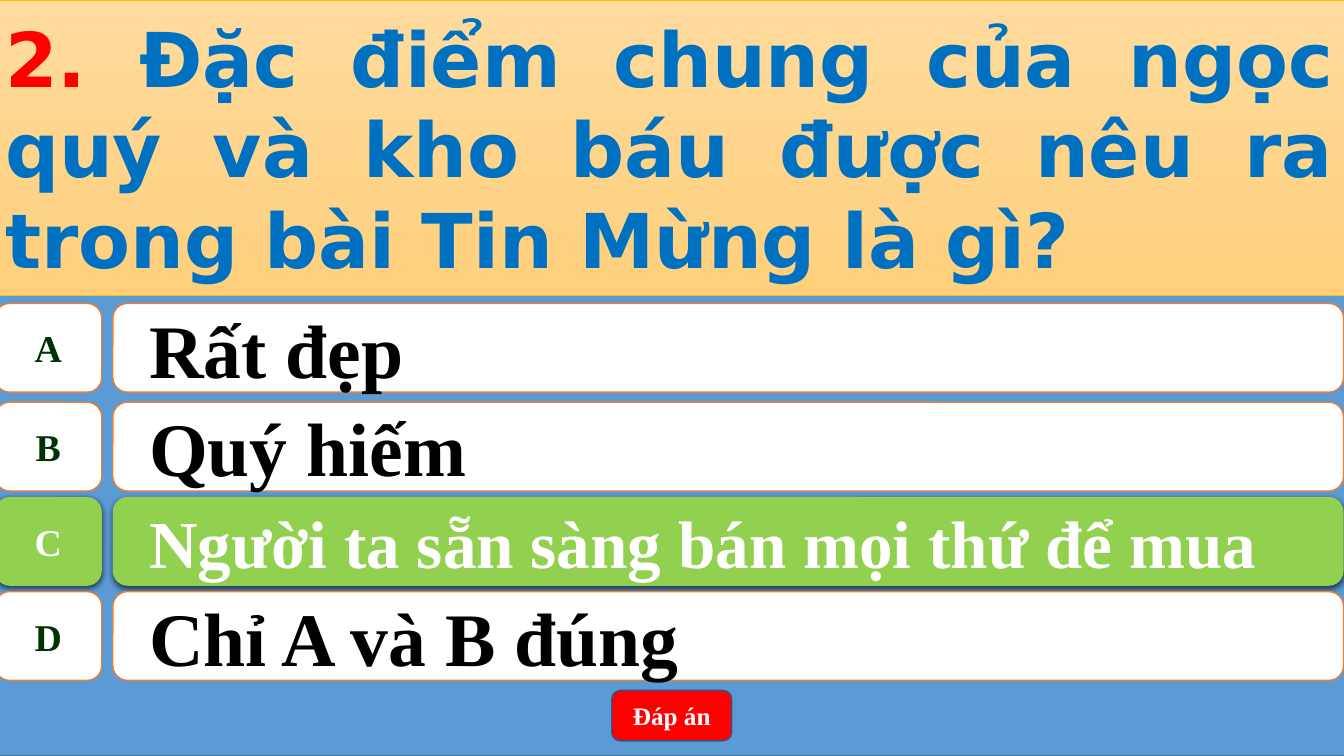
from lxml.etree import SubElement
from pptx import Presentation
from pptx.dml.color import RGBColor
from pptx.enum.shapes import MSO_SHAPE as Shape
from pptx.enum.text import MSO_ANCHOR as Anchor, MSO_AUTO_SIZE as AutoSize, PP_ALIGN as Align
from pptx.oxml.ns import qn
from pptx.util import Pt

LEFT, FULL_WIDTH = -3.6, 964
ROW_HEIGHT = 63.4
ANSWERS = [
    ("A", "Rất đẹp", 216.7, 54),
    ("B", "Quý hiếm", 287.3, 54),
    ("C", "Người ta sẵn sàng bán mọi thứ để mua", 355, 48),
    ("D", "Chỉ A và B đúng", 422.6, 54),
]
CORRECT = "C"


def color(hex_string):
    return RGBColor.from_string(hex_string)


def add_text(paragraph, text, *, size, ink, font="Times New Roman", bold=True):
    run = paragraph.add_run()
    run.text = text
    run.font.name = font
    run.font.size = Pt(size)
    run.font.bold = bold
    run.font.color.rgb = color(ink)


class QuizSlide:
    BLUE, GREEN, RED, WHITE = "5B9BD5", "92D050", "FF0000", "FFFFFF"
    ORANGE, LETTER, BLACK = "ED7D31", "003300", "000000"

    def __init__(self, presentation):
        self.slide = presentation.slides.add_slide(presentation.slide_layouts[5])

    def panel(self, kind, left, top, width, height, fill, line=None):
        shape = self.slide.shapes.add_shape(kind, Pt(left), Pt(top), Pt(width), Pt(height))
        shape.shadow.inherit = False
        shape.fill.solid()
        shape.fill.fore_color.rgb = color(fill)
        if line:
            shape.line.color.rgb = color(line)
            shape.line.width = Pt(1)
        else:
            shape.line.fill.background()
        return shape

    def label(self, shape, text, align=Align.CENTER, wrap=True, **text_format):
        frame = shape.text_frame
        frame.word_wrap = wrap
        frame.vertical_anchor = Anchor.MIDDLE
        paragraph = frame.paragraphs[0]
        paragraph.alignment = align
        add_text(paragraph, text, **text_format)
        return paragraph

    def drop_shadow(self, shape):
        effects = shape.element.spPr.find(qn("a:effectLst"))
        shadow = SubElement(effects, qn("a:outerShdw"), blurRad=str(Pt(4.5)),
                            dist=str(Pt(1.5)), dir="5400000", algn="ctr", rotWithShape="0")
        shade = SubElement(shadow, qn("a:srgbClr"), val=self.BLACK)
        SubElement(shade, qn("a:alpha"), val="63000")

    def answer(self, letter, text, top, size, correct):
        fill, line = (self.GREEN, None) if correct else (self.WHITE, self.ORANGE)
        badge = self.panel(Shape.FLOWCHART_ALTERNATE_PROCESS, LEFT, top, 76.3, ROW_HEIGHT, fill, line)
        self.label(badge, letter, wrap=False, size=27, ink=self.WHITE if correct else self.LETTER)

        bar = self.panel(Shape.ROUNDED_RECTANGLE, 80.6, top, 879.1, ROW_HEIGHT, fill, line)
        paragraph = self.label(bar, text, align=Align.LEFT, size=size,
                               ink=self.WHITE if correct else self.BLACK)
        paragraph.level = 1
        properties = paragraph._p.get_or_add_pPr()
        properties.set("marL", str(Pt(36)))
        properties.set("indent", str(Pt(-20.2)))
        if correct:
            self.drop_shadow(badge)
            self.drop_shadow(bar)

    def question(self, number, text):
        title = self.slide.shapes.title
        title.left, title.top, title.width, title.height = Pt(LEFT), Pt(0), Pt(FULL_WIDTH), Pt(211)
        title.fill.gradient()
        title.fill.gradient_angle = 270
        for stop, shade in zip(title.fill.gradient_stops, ("FFDB9E", "FFD07C")):
            stop.color.rgb = color(shade)
        title.line.color.rgb = color("FFC000")
        title.line.width = Pt(0.5)
        title.text_frame.auto_size = AutoSize.NONE
        paragraph = self.label(title, number, align=Align.JUSTIFY, size=54,
                               ink=self.RED, font="DejaVu Sans")
        add_text(paragraph, text, size=54, ink="0070C0", font="DejaVu Sans")
        # Bring the title in front of the backdrop
        title.element.getparent().append(title.element)


def main():
    presentation = Presentation()
    presentation.slide_width, presentation.slide_height = Pt(960), Pt(540)
    quiz = QuizSlide(presentation)

    # Backdrop
    quiz.panel(Shape.RECTANGLE, LEFT, 0, FULL_WIDTH, 540, quiz.BLUE, "43739E")

    # Answer rows
    for letter, text, top, size in ANSWERS:
        quiz.answer(letter, text, top, size, correct=letter == CORRECT)

    # Answer button
    button = quiz.panel(Shape.ROUNDED_RECTANGLE, 437, 493.2, 85.7, 36, quiz.RED, "325491")
    quiz.label(button, "Đáp án", size=18, ink=quiz.WHITE)

    # Question
    quiz.question("2. ", "Đặc điểm chung của ngọc quý và kho báu được nêu ra "
                         "trong bài Tin Mừng là gì?")

    presentation.save("out.pptx")


if __name__ == "__main__":
    main()
